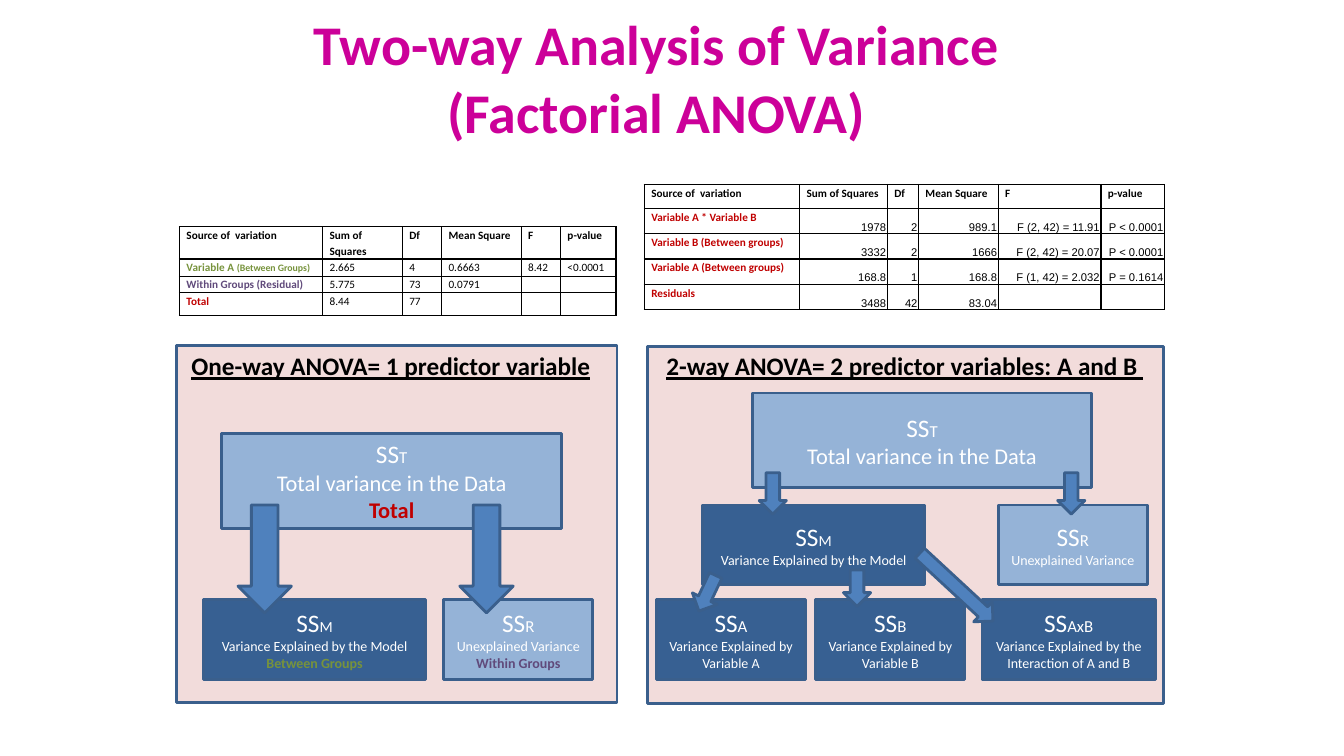
from lxml import etree
from pptx import Presentation
from pptx.dml.color import RGBColor
from pptx.enum.shapes import MSO_SHAPE
from pptx.enum.text import MSO_ANCHOR, PP_ALIGN
from pptx.oxml.ns import qn
from pptx.util import Inches, Pt

RECTANGLE, RIGHT_ARROW = MSO_SHAPE.RECTANGLE, MSO_SHAPE.RIGHT_ARROW
MIDDLE, BOTTOM = MSO_ANCHOR.MIDDLE, MSO_ANCHOR.BOTTOM
CENTER, RIGHT = PP_ALIGN.CENTER, PP_ALIGN.RIGHT

COLORS = {
    "title": "CC0099", "panel": "F2DCDB", "light": "95B3D7", "dark": "376092",
    "arrow": "4F81BD", "outline": "3A5F8C", "red": "C00000", "green": "77933C",
    "purple": "604A7B", "black": "000000", "white": "FFFFFF",
}


def write(paragraph, text, size, color, **font_format):
    """Append one formatted run; Calibri unless a name is given."""
    run = paragraph.add_run()
    run.text = text
    run.font.color.rgb = RGBColor.from_string(COLORS[color])
    for key, value in {"name": "Calibri", "size": Pt(size), **font_format}.items():
        setattr(run.font, key, value)


def add_outlined(kind, place, fill):
    shape = slide.shapes.add_shape(kind, *map(Inches, place))
    shape.shadow.inherit = False
    shape.fill.solid()
    shape.fill.fore_color.rgb = RGBColor.from_string(COLORS[fill])
    shape.line.color.rgb = RGBColor.from_string(COLORS["outline"])
    shape.line.width = Pt(2)
    return shape


prs = Presentation()
prs.slide_width, prs.slide_height = Inches(13.33), Inches(7.5)
slide = prs.slides.add_slide(prs.slide_layouts[6])

# Panels and title
for panel in [(6.42, 3.44, 5.12, 3.54), (1.75, 3.43, 4.37, 3.54)]:
    add_outlined(RECTANGLE, panel, "panel")

title = slide.shapes.add_textbox(Inches(2.01), Inches(0.46), Inches(9), Inches(0.61)).text_frame
title.word_wrap = True
title.vertical_anchor = MIDDLE
for index, line in enumerate(["Two-way Analysis of Variance", "(Factorial ANOVA)"]):
    paragraph = title.add_paragraph() if index else title.paragraphs[0]
    paragraph.alignment = CENTER
    write(paragraph, line, 40, "title", bold=True)

for heading, left, width in [
    ("One-way ANOVA= 1 predictor variable", 1.8, 4.19),
    ("2-way ANOVA= 2 predictor variables: A and B ", 6.51, 4.98),
]:
    frame = slide.shapes.add_textbox(Inches(left), Inches(3.43), Inches(width), Inches(0.4)).text_frame
    frame.word_wrap = False
    write(frame.paragraphs[0], heading, 18, "black", bold=True, underline=True)

# ANOVA tables: row labels are lists of (text, size, color)
HEADER = ["Source of  variation", "Sum of Squares", "Df", "Mean Square", "F", "p-value"]
LABEL_MARGINS = {"margin_left": Inches(0.07), "margin_right": Inches(0.07),
                 "margin_top": 0, "margin_bottom": 0}
RESULT_FORMAT = {"margin_left": Inches(0.01), "margin_right": Inches(0.01),
                 "margin_top": Inches(0.01), "margin_bottom": 0, "vertical_anchor": BOTTOM}
one_way = [
    ([("Variable A ", 8, "green"), ("(Between Groups)", 7, "green")],
     "2.665", "4", "0.6663", "8.42", "<0.0001"),
    ([("Within Groups (Residual)", 8, "purple")], "5.775", "73", "0.0791", "", ""),
    ([("Total", 8, "red")], "8.44", "77", "", "", ""),
]
two_way = [
    ([("Variable A * Variable B", 8, "red")], "1978", "2", "989.1", "F (2, 42) = 11.91", "P < 0.0001"),
    ([("Variable B (Between groups)", 8, "red")], "3332", "2", "1666", "F (2, 42) = 20.07", "P < 0.0001"),
    ([("Variable A (Between groups)", 8, "red")], "168.8", "1", "168.8", "F (1, 42) = 2.032", "P = 0.1614"),
    ([("Residuals", 8, "red")], "3488", "42", "83.04", "", ""),
]
for left, top, widths, heights, results, right_aligned in [
    (1.78, 2.25, [1.42, 0.79, 0.39, 0.79, 0.39, 0.55], [0.32, 0.17, 0.16, 0.23], one_way, False),
    (6.39, 1.83, [1.54, 0.87, 0.31, 0.79, 1.02, 0.63], [0.24] + [0.25] * 4, two_way, True),
]:
    table = slide.shapes.add_table(
        len(heights), len(widths), Inches(left), Inches(top),
        Inches(sum(widths)), Inches(sum(heights))).table
    table.first_row = table.horz_banding = False
    for column, width in zip(table.columns, widths):
        column.width = Inches(width)
    for row, height in zip(table.rows, heights):
        row.height = Inches(height)
    for r, values in enumerate([HEADER] + results):
        for c, value in enumerate(values):
            cell = table.cell(r, c)
            paragraph = cell.text_frame.paragraphs[0]
            is_result = right_aligned and r > 0 and c > 0
            for key, setting in (RESULT_FORMAT if is_result else LABEL_MARGINS).items():
                setattr(cell, key, setting)
            if is_result:
                paragraph.alignment = RIGHT
            else:
                paragraph.line_spacing = 1.15
            if not value:
                etree.SubElement(paragraph._p, qn("a:endParaRPr"), sz="800")
            elif isinstance(value, list):
                for text, size, color in value:
                    write(paragraph, text, size, color, bold=True)
            else:
                write(paragraph, value, 8, "black", bold=r == 0,
                      name="Arial" if is_result else "Calibri")
            properties = cell._tc.get_or_add_tcPr()
            for side in ("a:lnL", "a:lnR", "a:lnT", "a:lnB"):
                border = etree.SubElement(properties, qn(side), w=str(Pt(1)))
                solid = etree.SubElement(border, qn("a:solidFill"))
                etree.SubElement(solid, qn("a:srgbClr"), val=COLORS["black"])
            cell.fill.background()

# Sum-of-squares boxes: place, fill, subscript and its size, lines below
MODEL = ("Variance Explained by the Model", 10, "white", False)
UNEXPLAINED = ("Unexplained Variance", 10, "white", False)
TOTAL = ("Total variance in the Data", 16, "white", False)
boxes = [
    ((2.2, 4.3, 3.37, 0.94), "light", "T", 12, [TOTAL, ("Total", 16, "red", True)]),
    ((4.4, 5.95, 1.48, 0.79), "light", "R", 12, [UNEXPLAINED, ("Within Groups", 10, "purple", True)]),
    ((2.02, 5.95, 2.2, 0.79), "dark", "M", 11, [MODEL, ("Between Groups", 10, "green", True)]),
    ((7.46, 3.9, 3.37, 0.94), "light", "T", 12, [TOTAL]),
    ((6.97, 5.01, 2.2, 0.79), "dark", "M", 11, [MODEL]),
    ((9.9, 5.01, 1.48, 0.79), "light", "R", 12, [UNEXPLAINED]),
]
for left, width, subscript, cause in [
    (6.51, 1.48, "A", "Variable A"),
    (8.09, 1.48, "B", "Variable B"),
    (9.74, 1.72, "AxB", "the Interaction of A and B"),
]:
    boxes.append(((left, 5.95, width, 0.79), "dark", subscript, 12,
                  [(f"Variance Explained by {cause}", 10, "white", False)]))

for place, fill, subscript, subscript_size, lines in boxes:
    frame = add_outlined(RECTANGLE, place, fill).text_frame
    frame.word_wrap = True
    frame.vertical_anchor = MIDDLE
    symbol = frame.paragraphs[0]
    symbol.alignment = CENTER
    write(symbol, "SS", 18, "white")
    write(symbol, subscript, subscript_size, "white")
    for text, size, color, bold in lines:
        paragraph = frame.add_paragraph()
        paragraph.alignment = CENTER
        write(paragraph, text, size, color, bold=bold)

# Arrows: left, top, length, thickness, rotation
for *place, rotation in [
    (2.09, 5.28, 1.07, 0.53, 90),
    (4.29, 5.28, 1.07, 0.53, 90),
    (7.46, 4.76, 0.41, 0.27, 90),
    (10.42, 4.76, 0.41, 0.27, 90),
    (8.99, 5.69, 0.99, 0.27, 42.8),
    (6.82, 5.75, 0.39, 0.27, 115.2),
    (8.32, 5.7, 0.36, 0.27, 90),
]:
    add_outlined(RIGHT_ARROW, place, "arrow").rotation = rotation

prs.save("out.pptx")
